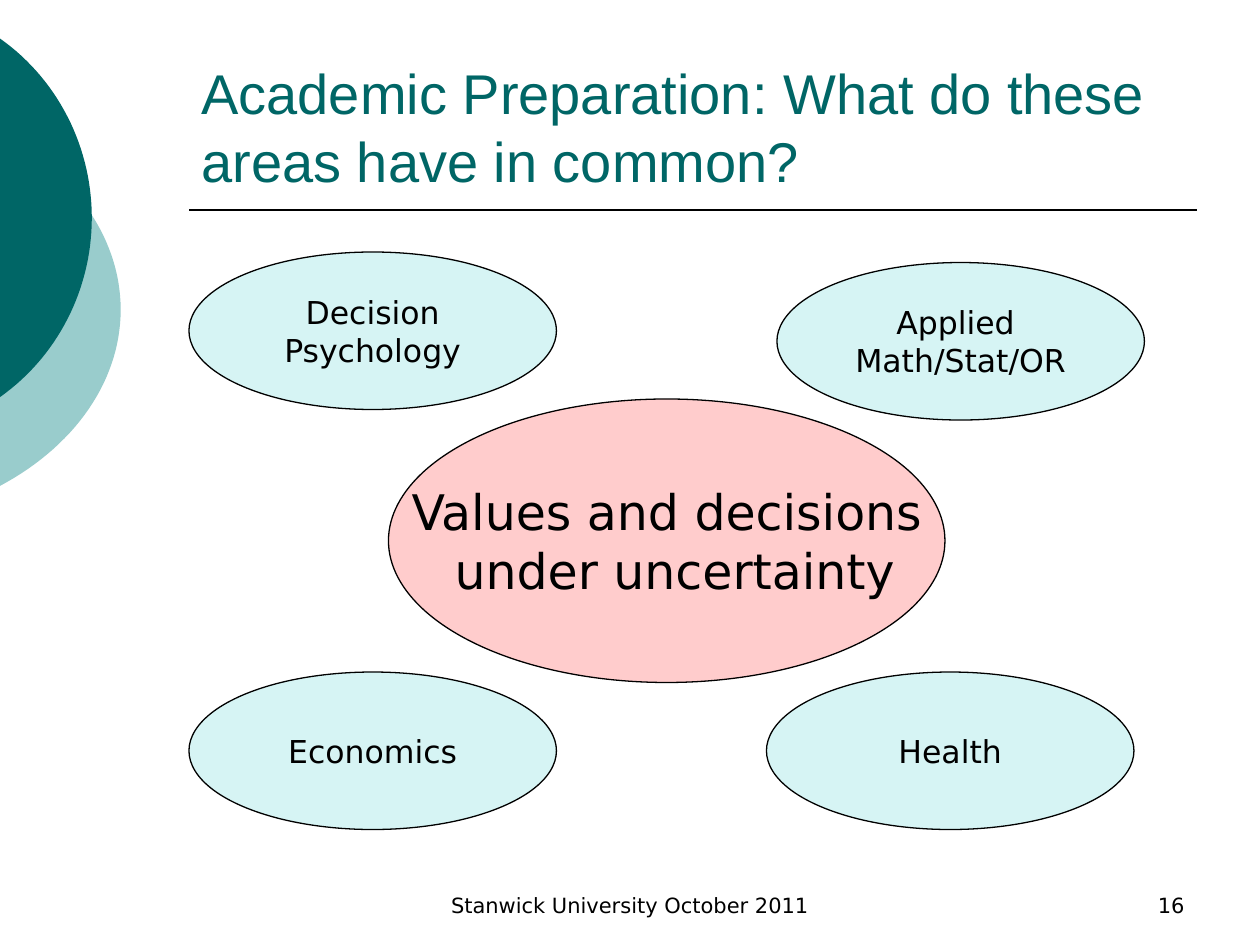
import math

from lxml import etree
from pptx import Presentation, util as u
from pptx.dml.color import RGBColor
from pptx.enum import shapes, text
from pptx.oxml import ns

PX = 9525  # EMU in one px, 96 px to the inch
TEAL = RGBColor(0x00, 0x66, 0x66)
PALE = RGBColor(0x99, 0xCC, 0xCC)
AQUA = RGBColor(0x33, 0xCC, 0xCC)
RED = RGBColor(0xFF, 0x00, 0x00)
BLACK = RGBColor(0x00, 0x00, 0x00)
LEFT, MID, RIGHT = text.PP_ALIGN.LEFT, text.PP_ALIGN.CENTER, text.PP_ALIGN.RIGHT


class Deck:
    face = "DejaVu Sans"

    def __init__(self, wide, high):
        self.prs = Presentation()
        self.prs.slide_width, self.prs.slide_height = wide * PX, high * PX
        self.slide = self.prs.slides.add_slide(self.prs.slide_layouts[6])
        self.shapes = self.slide.shapes

    def letter(self, shape, lines, size, align, anchor, wrap=True, face=face, color=BLACK):
        """Put styled lines of text into a shape."""
        frame = shape.text_frame
        frame.text = "\n".join(lines)
        form = {"word_wrap": wrap, "vertical_anchor": anchor}
        for name, value in form.items():
            setattr(frame, name, value)
        for para in frame.paragraphs:
            para.alignment = align
            for name, value in {"size": u.Pt(size), "name": face}.items():
                setattr(para.font, name, value)
            para.font.color.rgb = color

    def label(self, box, words, size, align, **style):
        """Add a text box whose text sits at the bottom."""
        shape = self.shapes.add_textbox(*(n * PX for n in box))
        self.letter(shape, [words], size, align, text.MSO_ANCHOR.BOTTOM, **style)

    def oval(self, box, lines, color, size):
        """Add an outlined ellipse with a fill of 20% opacity."""
        shape = self.shapes.add_shape(shapes.MSO_SHAPE.OVAL, *(n * PX for n in box))
        shape.shadow.inherit = False
        shape.fill.solid()
        shape.fill.fore_color.rgb = color
        tone = shape._element.spPr.find(ns.qn("a:solidFill"))[0]
        etree.SubElement(tone, ns.qn("a:alpha")).set("val", "20000")
        shape.line.color.rgb = BLACK
        shape.line.width = u.Pt(0.75)
        self.letter(shape, lines, size, MID, text.MSO_ANCHOR.MIDDLE, wrap=False)

    def arc(self, x, y, rx, ry, color, steps=60):
        """Add the part of an ellipse that lies right of the slide's left edge."""
        edge = math.acos(-x / rx)
        turns = [edge * (2 * i / steps - 1) for i in range(steps + 1)]
        dots = [(round((x + rx * math.cos(t)) * PX), round((y + ry * math.sin(t)) * PX))
                for t in turns]
        pen = self.shapes.build_freeform(*dots[0])
        pen.add_line_segments(dots[1:], close=True)
        shape = pen.convert_to_shape()
        shape.shadow.inherit = False
        shape.fill.solid()
        shape.fill.fore_color.rgb = color
        shape.line.fill.background()

    def rule(self, x, y, end):
        line = self.shapes.add_connector(
            shapes.MSO_CONNECTOR.STRAIGHT, x * PX, y * PX, end * PX, y * PX)
        line.line.color.rgb = BLACK
        line.line.width = u.Pt(1)
        etree.SubElement(line._element.spPr, ns.qn("a:effectLst"))


def main():
    deck = Deck(960, 720)
    deck.arc(-124, 236, 216, 164, PALE)
    deck.arc(-92, 166, 162, 166, TEAL)
    deck.rule(144, 160, 912)
    deck.label((328, 656, 304, 48), "Stanwick University October 2011", 12, MID)
    deck.label((688, 656, 224, 48), "16", 12, RIGHT)
    deck.label((144, 32, 768, 120),
               "Academic Preparation: What do these areas have in common?",
               32, LEFT, face="Arial", color=TEAL)
    fields = [
        (144, 192, ["Decision", "Psychology"]),
        (144, 512, ["Economics"]),
        (584, 512, ["Health"]),
        (592, 200, ["Applied ", "Math/Stat/OR"]),
    ]
    for x, y, lines in fields:
        deck.oval((x, y, 280, 120), lines, AQUA, 18)
    deck.oval((296, 304, 424, 216), ["Values and decisions", " under uncertainty"], RED, 28)
    deck.prs.save("out.pptx")


if __name__ == "__main__":
    main()
